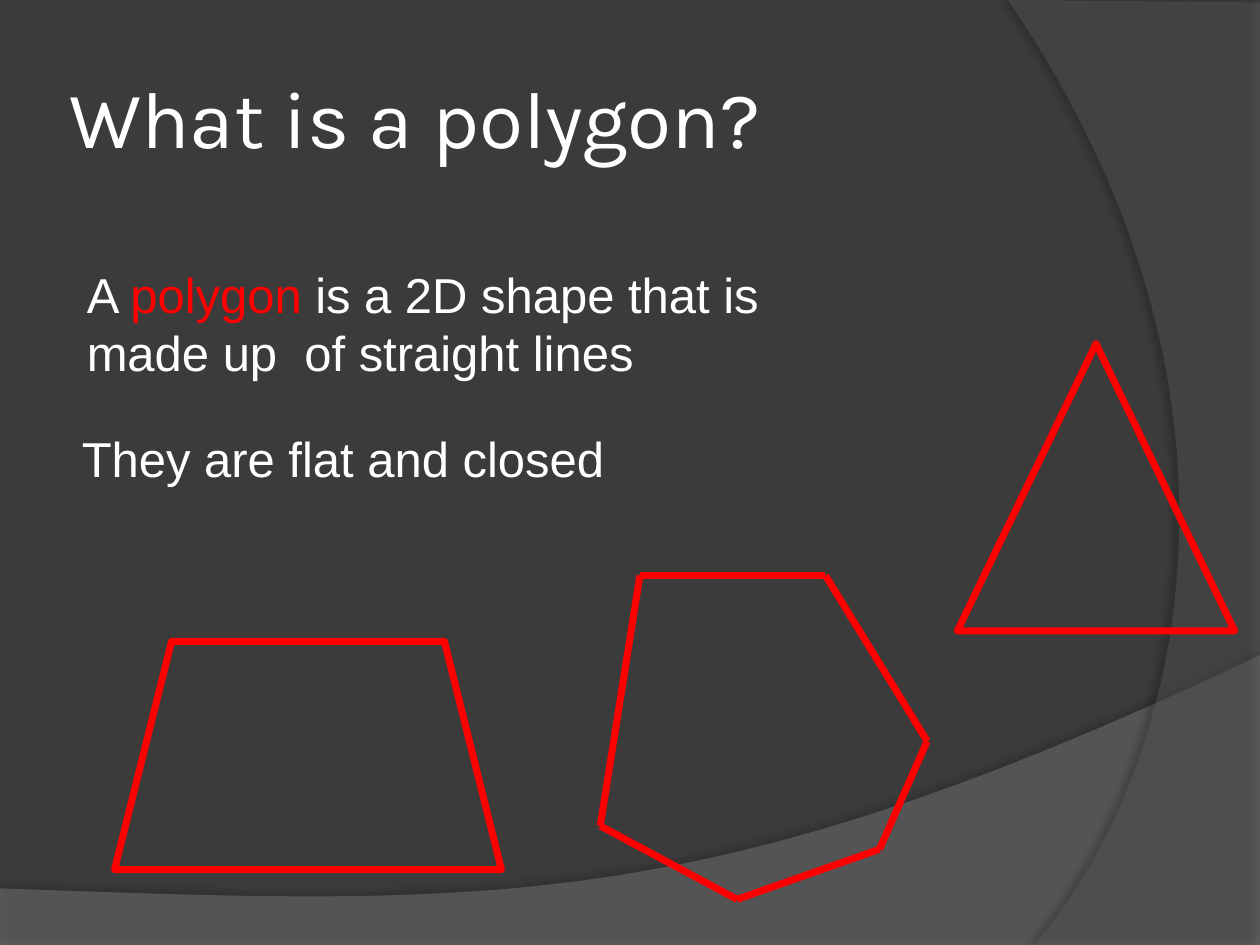
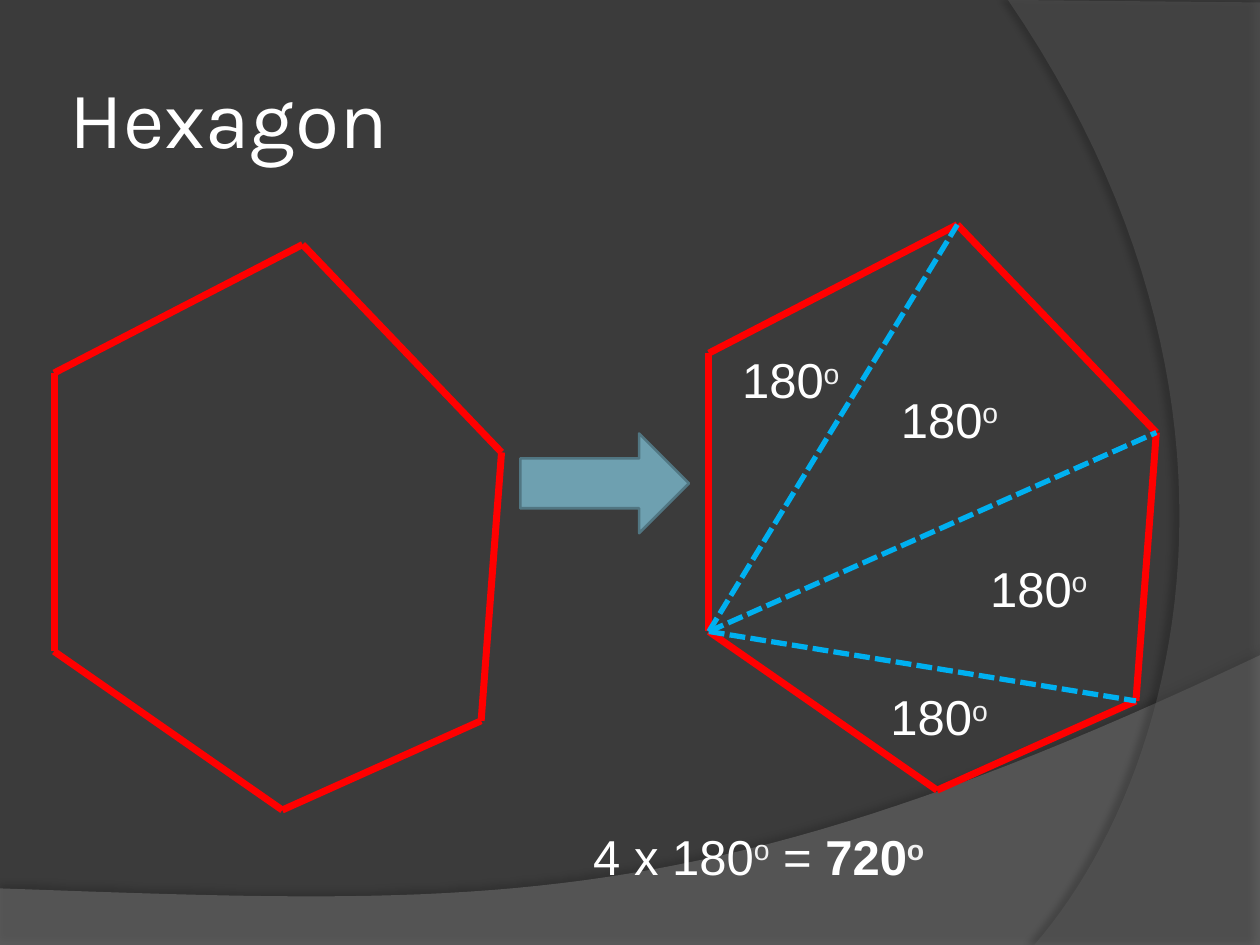
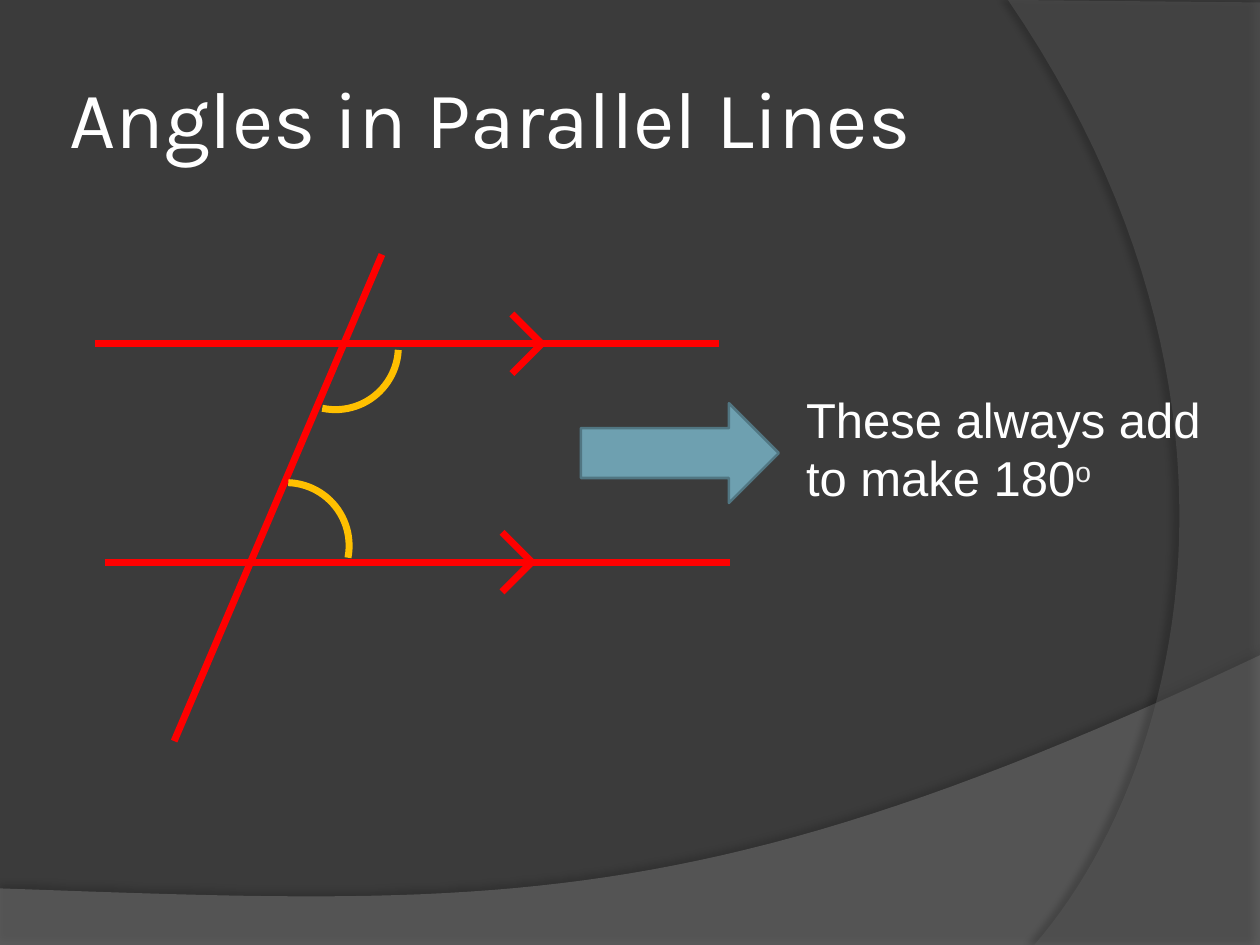
"""Builds three slides on polygons and the angles in parallel lines."""
from dataclasses import dataclass

from lxml import etree
from pptx import Presentation
from pptx.dml.color import RGBColor
from pptx.enum.dml import MSO_LINE
from pptx.enum.shapes import MSO_CONNECTOR, MSO_SHAPE
from pptx.enum.text import MSO_ANCHOR, MSO_AUTO_SIZE, PP_ALIGN
from pptx.oxml.ns import qn
from pptx.util import Cm, Pt

STRAIGHT = MSO_CONNECTOR.STRAIGHT
ARC, ARROW = MSO_SHAPE.ARC, MSO_SHAPE.RIGHT_ARROW
TRIANGLE, TRAPEZOID = MSO_SHAPE.ISOSCELES_TRIANGLE, MSO_SHAPE.TRAPEZOID
DASHED = MSO_LINE.SQUARE_DOT
MIDDLE, TOP = MSO_ANCHOR.MIDDLE, MSO_ANCHOR.TOP
LEFT, FIXED = PP_ALIGN.LEFT, MSO_AUTO_SIZE.NONE


@dataclass(frozen=True)
class Theme:
    """Colours, fonts and sizes of the deck."""
    back: str = "3B3B3B"
    text: str = "FFFFFF"
    degree: str = "F2F2F2"
    outline: str = "FF0000"
    diagonal: str = "00B0F0"
    angle: str = "FFC000"
    arrow: str = "6EA0B0"
    arrow_edge: str = "517682"
    title_font: str = "Karla"
    body_font: str = "Arial"
    title_size: int = 46
    body_size: int = 28
    outline_width: float = 4
    diagonal_width: float = 3
    edge_width: float = 1.5


T = Theme()
SLIDE_W, SLIDE_H = 25.4, 19.05
TITLE_BOX = (1.27, 0.76, 20.75, 3.18)
TITLE_INSET = 0.13

BANDS = [
    {"corners": [(0, 17.91), (0, SLIDE_H), (SLIDE_W, SLIDE_H)],
     "curve": [(SLIDE_W, 13.21), (14.2, 18.52), (9.93, 18.26), (0, 17.91)],
     "color": "7F7F7F", "opacity": 45,
     "shadow": {"opacity": 35, "blur": 4, "dist": 3.5, "angle": 270}},
    {"corners": [(SLIDE_W, 0.05), (SLIDE_W, SLIDE_H)],
     "curve": [(20.85, SLIDE_H), (23.75, 15.72), (25.86, 8.1), (20.32, 0)],
     "color": "5E5E5E", "opacity": 40,
     "shadow": {"opacity": 45, "blur": 4, "dist": 4, "angle": 180}},
]
CURVE_STEPS = 48

DEGREE = ("o", {"color": T.degree, "raised": True})

DEFINITION = [("A ", {}), ("polygon ", {"color": T.outline}),
              ("is a 2D shape that is made up  of straight lines", {})]
DEFINITION_BOX = (1.5, 5.2, 16.1, 2.6)
PROPERTY = [("They are flat and closed", {})]
PROPERTY_BOX = (1.4, 8.51, 12.3, 1.45)
TRIANGLE_BOX = (19.3, 6.93, 5.59, 5.79)
TRAPEZOID_BOX = (2.31, 12.93, 7.8, 4.6)
IRREGULAR = [(12.9, 11.6), (16.64, 11.6), (18.69, 14.94),
             (17.73, 17.12), (14.86, 18.13), (12.1, 16.65)]

HEXAGON = [(6.1, 4.93), (1.09, 7.52), (1.09, 13.13),
           (5.69, 16.33), (9.7, 14.53), (10.11, 9.12)]
HEXAGON_SHIFT = (13.2, -0.4)
FAN_FROM, FAN_TO = 2, (0, 5, 4)
ANGLE_SUM = [("180", {}), DEGREE]
ANGLE_SPOTS = [(14.71, 6.93), (17.91, 7.72), (19.71, 11.13), (17.7, 13.72)]
ANGLE_SIZE = (2.59, 1.45)
HEXAGON_ARROW = (10.49, 8.74, 3.4, 2.01)
TOTAL = [("4 x 180", {}), DEGREE, (" = ", {}), ("720", {"bold": True}),
         ("o", {"color": T.degree, "raised": True, "bold": True})]
TOTAL_BOX = (11.71, 16.54, 11.2, 1.45)

PARALLELS = [((1.91, 6.93), (14.5, 6.93)), ((2.11, 11.33), (14.71, 11.33))]
TRANSVERSAL = ((7.7, 5.13), (3.51, 14.94))
CHEVRON_TIPS = [(10.92, 6.93), (10.72, 11.33)]
CHEVRON_ARM = 0.6
ARCS = [((5.49, 5.72, 2.54, 2.54), 67.8), ((4.5, 9.73, 2.54, 2.54), 336.8)]
ARC_ANGLES = (295.2, 34.24)
ADJUST_PER_DEGREE = 0.6
PARALLEL_ARROW = (11.71, 8.13, 3.99, 2.01)
RULE = [("These always add to make 180", {}), DEGREE]
RULE_BOX = (16, 7.72, 9.4, 2.64)


def cm(values):
    """Turn numbers into lengths."""
    return [Cm(v) for v in values]


def rgb(color):
    """Turn a hex string into a colour."""
    return RGBColor.from_string(color)


def write(tf, runs, size=T.body_size, font=T.body_font, anchor=TOP):
    """Fill a text frame with one left-aligned paragraph of formatted runs."""
    tf.word_wrap, tf.auto_size, tf.vertical_anchor = True, FIXED, anchor
    p = tf.paragraphs[0]
    p.alignment = LEFT
    for text, style in runs:
        r = p.add_run()
        r.text = text
        r.font.name, r.font.size = font, Pt(size)
        r.font.bold = style.get("bold", False)
        r.font.color.rgb = rgb(style.get("color", T.text))
        if style.get("raised"):
            r._r.get_or_add_rPr().set("baseline", "30000")


def add_text(s, box, runs):
    """Add a text box."""
    write(s.shapes.add_textbox(*cm(box)).text_frame, runs)


def add_line(s, start, end, color=T.outline, width=T.outline_width, dash=None):
    """Add a straight line without shadow."""
    line = s.shapes.add_connector(STRAIGHT, *cm(start + end))
    line.line.color.rgb, line.line.width = rgb(color), Pt(width)
    if dash:
        line.line.dash_style = dash
    etree.SubElement(line.element.spPr, qn("a:effectLst"))


def add_polygon(s, points):
    """Join the points by lines and close the outline."""
    for start, end in zip(points, points[1:] + points[:1]):
        add_line(s, start, end)


def add_figure(s, kind, box, color=T.outline, width=T.outline_width, fill=None):
    """Add a preset shape, hollow unless a fill is given."""
    sp = s.shapes.add_shape(kind, *cm(box))
    sp.shadow.inherit = False
    sp.line.color.rgb, sp.line.width = rgb(color), Pt(width)
    if fill:
        sp.fill.solid()
        sp.fill.fore_color.rgb = rgb(fill)
    else:
        sp.fill.background()
    return sp


def add_arrow(s, box):
    """Add a block arrow pointing right."""
    add_figure(s, ARROW, box, T.arrow_edge, T.edge_width, T.arrow)


def bezier(a, b, c, d):
    """List points along a cubic curve."""
    steps = [i / CURVE_STEPS for i in range(CURVE_STEPS + 1)]
    return [tuple((1 - t) ** 3 * p + 3 * (1 - t) ** 2 * t * q
                  + 3 * (1 - t) * t ** 2 * u + t ** 3 * v
                  for p, q, u, v in zip(a, b, c, d)) for t in steps]


def set_opacity(color, percent):
    """Give a colour element an opacity."""
    etree.SubElement(color, qn("a:alpha"), val=str(percent * 1000))


def add_band(s, band):
    """Add a translucent curved band with a soft shadow."""
    points = [cm(pt) for pt in band["corners"] + bezier(*band["curve"])]
    builder = s.shapes.build_freeform(*points[0], scale=1.0)
    builder.add_line_segments(points[1:], close=True)
    sp = builder.convert_to_shape()
    sp.fill.solid()
    sp.fill.fore_color.rgb = rgb(band["color"])
    sp.line.fill.background()
    sp.shadow.inherit = False
    spPr = sp.element.spPr
    set_opacity(spPr.find(qn("a:solidFill"))[0], band["opacity"])
    look = band["shadow"]
    shadow = etree.SubElement(
        spPr.find(qn("a:effectLst")), qn("a:outerShdw"),
        blurRad=str(Pt(look["blur"])), dist=str(Pt(look["dist"])),
        dir=str(look["angle"] * 60000), rotWithShape="0")
    set_opacity(etree.SubElement(shadow, qn("a:srgbClr"), val="000000"), look["opacity"])
    return sp


def set_up_master(prs, layout, s):
    """Give the master its background, bands and title place."""
    fill = prs.slide_master.background.fill
    fill.solid()
    fill.fore_color.rgb = rgb(T.back)
    title = layout.placeholders[0]
    title.left, title.top, title.width, title.height = cm(TITLE_BOX)
    for i, band in enumerate(BANDS):
        sp = add_band(s, band).element
        sp.nvSpPr.cNvPr.id = 100 + i
        prs.slide_master.shapes.element.insert(2 + i, sp)


def add_slide(prs, layout, title):
    """Add a slide with its title."""
    s = prs.slides.add_slide(layout)
    tf = s.shapes.title.text_frame
    tf.margin_left = tf.margin_right = tf.margin_top = tf.margin_bottom = Cm(TITLE_INSET)
    write(tf, [(title, {})], T.title_size, T.title_font, MIDDLE)
    return s


def polygon_slide(prs, layout):
    """Define a polygon and show three of them."""
    s = add_slide(prs, layout, "What is a polygon?")
    add_figure(s, TRIANGLE, TRIANGLE_BOX)
    add_figure(s, TRAPEZOID, TRAPEZOID_BOX)
    add_polygon(s, IRREGULAR)
    add_text(s, PROPERTY_BOX, PROPERTY)
    add_text(s, DEFINITION_BOX, DEFINITION)
    return s


def hexagon_slide(prs, layout):
    """Split a hexagon into four triangles."""
    s = add_slide(prs, layout, "Hexagon")
    dx, dy = HEXAGON_SHIFT
    split = [(x + dx, y + dy) for x, y in HEXAGON]
    add_polygon(s, HEXAGON)
    add_polygon(s, split)
    for i in FAN_TO:
        add_line(s, split[FAN_FROM], split[i], T.diagonal, T.diagonal_width, DASHED)
    for spot in ANGLE_SPOTS:
        add_text(s, spot + ANGLE_SIZE, ANGLE_SUM)
    add_arrow(s, HEXAGON_ARROW)
    add_text(s, TOTAL_BOX, TOTAL)


def parallel_slide(prs, layout):
    """Mark the two angles between parallel lines."""
    s = add_slide(prs, layout, "Angles in Parallel Lines")
    for start, end in PARALLELS + [TRANSVERSAL]:
        add_line(s, start, end)
    for box, turn in ARCS:
        arc = add_figure(s, ARC, box, T.angle)
        arc.rotation = turn
        for i, angle in enumerate(ARC_ANGLES):
            arc.adjustments[i] = angle * ADJUST_PER_DEGREE
    add_arrow(s, PARALLEL_ARROW)
    add_text(s, RULE_BOX, RULE)
    for x, y in CHEVRON_TIPS:
        for arm in (CHEVRON_ARM, -CHEVRON_ARM):
            add_line(s, (x, y), (x - CHEVRON_ARM, y + arm))


def main():
    """Build and save the deck."""
    prs = Presentation()
    prs.slide_width, prs.slide_height = cm((SLIDE_W, SLIDE_H))
    layout = prs.slide_layouts.get_by_name("Title Only")
    set_up_master(prs, layout, polygon_slide(prs, layout))
    hexagon_slide(prs, layout)
    parallel_slide(prs, layout)
    prs.save("out.pptx")


if __name__ == "__main__":
    main()
